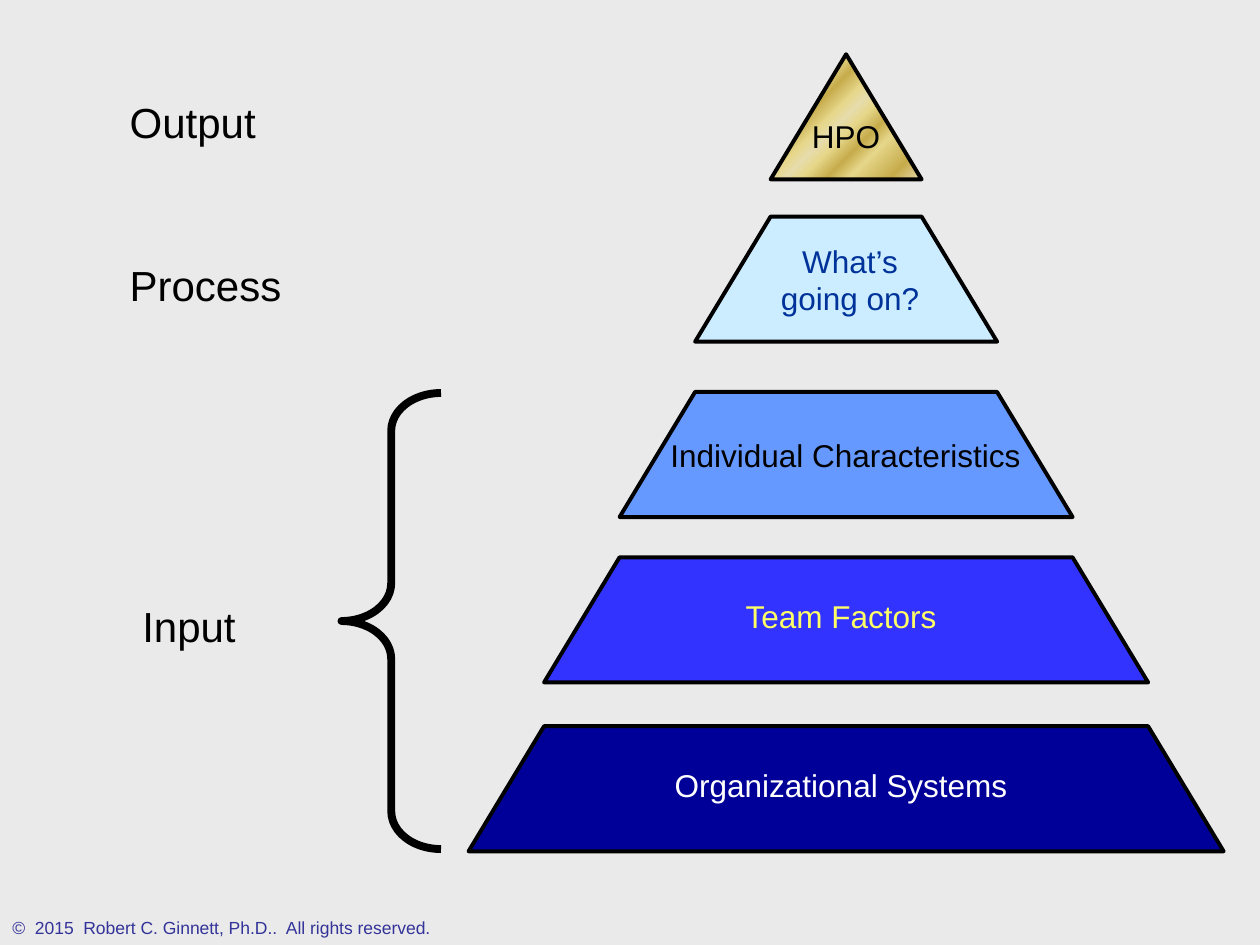
from dataclasses import dataclass

from lxml.etree import SubElement
from pptx import Presentation
from pptx.dml.color import RGBColor
from pptx.enum.shapes import MSO_SHAPE
from pptx.enum.text import PP_ALIGN
from pptx.oxml.ns import qn
from pptx.shapes.autoshape import Shape
from pptx.slide import Slide
from pptx.util import Pt

COLORS = {
    "background": "EAEAEA",
    "black": "000000",
    "white": "FFFFFF",
    "yellow": "FFFF66",
    "ink": "003399",
    "copyright": "333399",
    "ice": "CCECFF",
    "sky": "6699FF",
    "blue": "3333FF",
    "navy": "000099",
    "pale gold": "E6DCAC",
    "dark gold": "C7AC4C",
    "light gold": "E6D78A",
}
GOLD_STOPS = [
    (0, "pale gold"), (12, "dark gold"), (27, "light gold"), (35, "dark gold"),
    (44, "light gold"), (50, "pale gold"), (56, "light gold"), (65, "dark gold"),
    (73, "light gold"), (88, "dark gold"), (100, "pale gold"),
]
CENTER = 483.5
HALF_STEP = 43.15
TIER_HEIGHT = 71.5


@dataclass
class Label:
    text: str
    left: float
    top: float
    width: float
    height: float
    size: float = 18
    color: str = "black"
    align: PP_ALIGN = PP_ALIGN.CENTER
    wrap: bool = True


@dataclass
class Tier:
    top: float
    fill: str
    label: Label


TIERS = [
    Tier(31, "gold", Label("HPO", 429.1, 63.4, 108.7, 29)),
    Tier(123.8, "ice", Label("What’s going on?", 430.6, 134.6, 110.2, 50.4, color="ink")),
    Tier(224, "sky", Label("Individual Characteristics", 370.8, 245.5, 224.6, 29)),
    Tier(318.5, "blue", Label("Team Factors ", 370.8, 337.7, 224.6, 29, color="yellow")),
    Tier(415, "navy", Label("Organizational Systems ", 370.8, 434.2, 224.6, 29, color="white")),
]
STAGES = [
    Label("Output", 67, 51.8, 102.2, 36, 24, align=PP_ALIGN.LEFT),
    Label("Process", 67, 144.7, 113, 36, 24, align=PP_ALIGN.LEFT),
    Label("Input", 74.2, 339.8, 90, 36, 24, align=PP_ALIGN.LEFT),
]
COPYRIGHT = Label("©  2015  Robert C. Ginnett, Ph.D..  All rights reserved.",
                  0, 520.6, 255.6, 19.4, 10, "copyright", PP_ALIGN.LEFT, False)


def rgb(name: str) -> RGBColor:
    return RGBColor.from_string(COLORS[name])


def outline(shape: Shape, width: float) -> None:
    shape.shadow.inherit = False
    shape.line.color.rgb = rgb("black")
    shape.line.width = Pt(width)


def fill_gold(shape: Shape) -> None:
    shape.fill.gradient()
    gradient = shape.fill._xPr.find(qn("a:gradFill"))
    stops = gradient.find(qn("a:gsLst"))
    for stop in list(stops):
        stops.remove(stop)
    for percent, name in GOLD_STOPS:
        stop = SubElement(stops, qn("a:gs"), pos=str(percent * 1000))
        SubElement(stop, qn("a:srgbClr"), val=COLORS[name])
    direction = gradient.find(qn("a:lin"))
    direction.set("ang", str(45 * 60000))
    direction.set("scaled", "0")


def draw_label(page: Slide, label: Label) -> None:
    box = page.shapes.add_textbox(Pt(label.left), Pt(label.top), Pt(label.width), Pt(label.height))
    box.text_frame.word_wrap = label.wrap
    paragraph = box.text_frame.paragraphs[0]
    paragraph.text = label.text
    paragraph.alignment = label.align
    paragraph.font.name = "Arial"
    paragraph.font.size = Pt(label.size)
    paragraph.font.color.rgb = rgb(label.color)


def draw_tier(page: Slide, level: int, tier: Tier) -> None:
    upper, lower = level * HALF_STEP, (level + 1) * HALF_STEP
    bottom = tier.top + TIER_HEIGHT
    corners = [(CENTER - upper, tier.top), (CENTER + upper, tier.top),
               (CENTER + lower, bottom), (CENTER - lower, bottom)]
    if level == 0:
        corners.pop(0)
    start, *others = [(Pt(x), Pt(y)) for x, y in corners]
    builder = page.shapes.build_freeform(*start)
    builder.add_line_segments(others, close=True)
    shape = builder.convert_to_shape()
    outline(shape, 2.25)
    if tier.fill == "gold":
        fill_gold(shape)
    else:
        shape.fill.solid()
        shape.fill.fore_color.rgb = rgb(tier.fill)
    draw_label(page, tier.label)


def draw_brace(page: Slide) -> None:
    brace = page.shapes.add_shape(MSO_SHAPE.LEFT_BRACE, Pt(195.1), Pt(224.6), Pt(56.9), Pt(260.6))
    brace.adjustments[0] = 0.38
    brace.adjustments[1] = 0.5
    brace.fill.background()
    outline(brace, 4.5)


def main() -> None:
    deck = Presentation()
    deck.slide_width, deck.slide_height = Pt(720), Pt(540)
    page = deck.slides.add_slide(deck.slide_layouts[6])
    page.background.fill.solid()
    page.background.fill.fore_color.rgb = rgb("background")
    for level, tier in enumerate(TIERS):
        draw_tier(page, level, tier)
    draw_brace(page)
    for label in [*STAGES, COPYRIGHT]:
        draw_label(page, label)
    deck.save("out.pptx")


if __name__ == "__main__":
    main()
